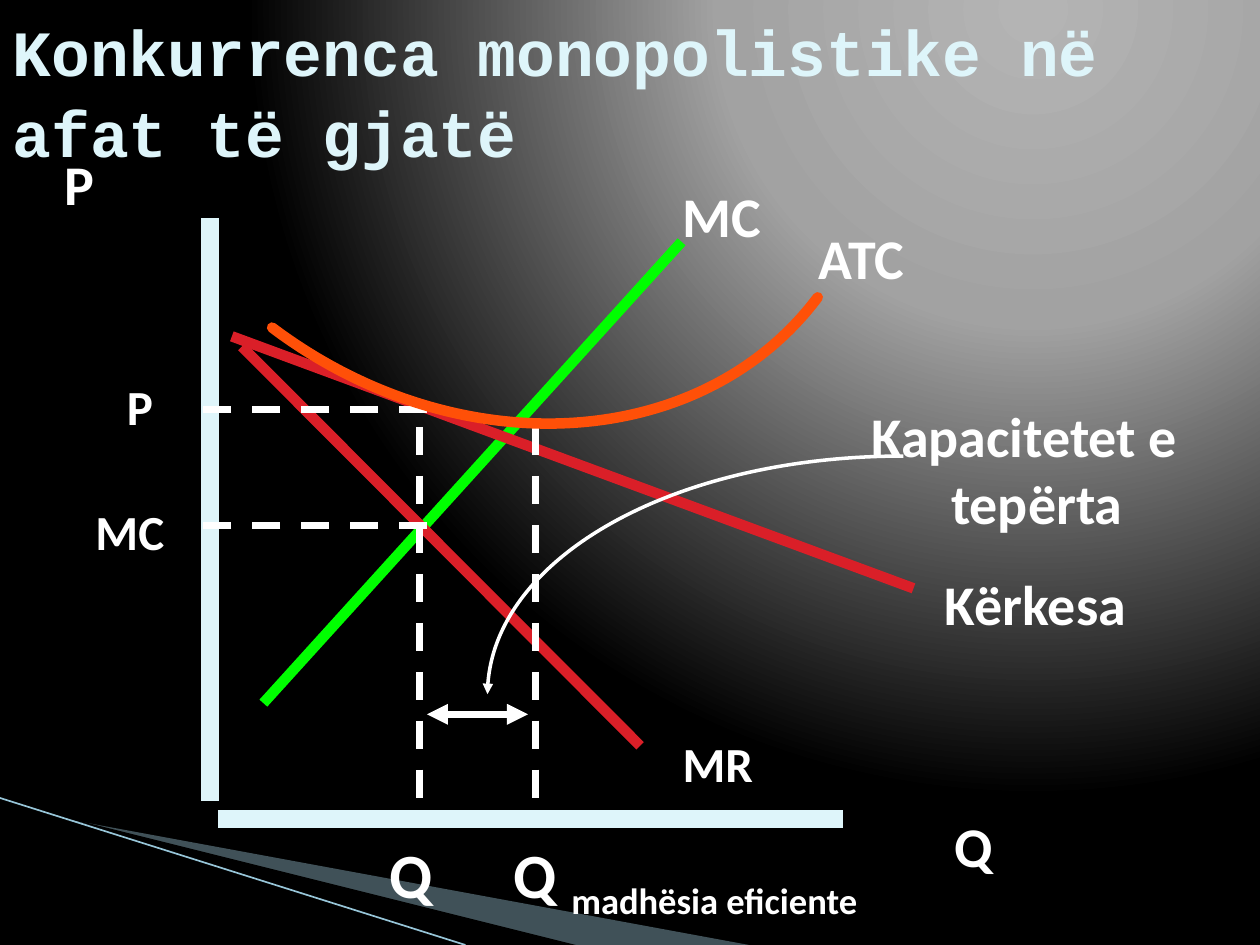
from lxml import etree
from pptx import Presentation
from pptx.dml.color import RGBColor
from pptx.enum.dml import MSO_LINE
from pptx.enum.shapes import MSO_CONNECTOR
from pptx.enum.text import MSO_ANCHOR, MSO_AUTO_SIZE, PP_ALIGN
from pptx.oxml import parse_xml
from pptx.oxml.ns import nsdecls, qn
from pptx.util import Pt

STRAIGHT = MSO_CONNECTOR.STRAIGHT
DASH = MSO_LINE.DASH
MIDDLE = MSO_ANCHOR.MIDDLE
GROW = MSO_AUTO_SIZE.SHAPE_TO_FIT_TEXT
NO_FIT = MSO_AUTO_SIZE.NONE
LEFT, CENTER = PP_ALIGN.LEFT, PP_ALIGN.CENTER
TITLE_ONLY = 5

COLORS = {
    "ice": "DEF5FA", "white": "FFFFFF", "black": "000000", "green": "00FF00",
    "red": "DA1F28", "orange": "FF5008", "wedge": "A0CBDC", "trim": "97C5D8",
}
BACKGROUND_STOPS = [(0, "B4B4B4"), (40, "A2A2A2"), (100, "000000")]


def rgb(name):
    return RGBColor.from_string(COLORS[name])


class Painter:
    """Draws styled elements on the current slide; lengths are in points."""

    label_font = "Calibri"
    title_font = "Courier New"

    def __init__(self, slide):
        self.slide = slide
        self.shapes = slide.shapes

    def background(self, stops):
        stop_xml = "".join(
            f'<a:gs pos="{pos * 1000}"><a:srgbClr val="{color}"/></a:gs>'
            for pos, color in stops)
        common = self.slide.element.cSld
        common.insert(0, parse_xml(
            f'<p:bg {nsdecls("p", "a")}><p:bgPr><a:gradFill rotWithShape="1">'
            f'<a:gsLst>{stop_xml}</a:gsLst><a:path path="circle">'
            '<a:fillToRect l="65000" t="0" r="0" b="98000"/></a:path>'
            '</a:gradFill><a:effectLst/></p:bgPr></p:bg>'))

    def span(self, para, text, size, color, font):
        span = para.add_run()
        span.text = text
        span.font.size = Pt(size)
        span.font.name = font
        span.font.bold = True
        span.font.color.rgb = rgb(color)
        return span

    def title(self, text, left, top, width, height):
        box = self.shapes.title
        box.left, box.top = Pt(left), Pt(top)
        box.width, box.height = Pt(width), Pt(height)
        frame = box.text_frame
        frame.word_wrap = True
        frame.auto_size = NO_FIT
        frame.vertical_anchor = MIDDLE
        para = frame.paragraphs[0]
        para.alignment = LEFT
        para.line_spacing = 1.05
        self.span(para, text, 36.9, "ice", self.title_font)

    def label(self, lines, left, top, width, height, size=32,
              align=LEFT, subscript=None):
        box = self.shapes.add_textbox(Pt(left), Pt(top), Pt(width), Pt(height))
        frame = box.text_frame
        frame.word_wrap = False
        frame.auto_size = GROW
        for index, line in enumerate(lines):
            para = frame.add_paragraph() if index else frame.paragraphs[0]
            para.alignment = align
            self.span(para, line, size, "white", self.label_font)
        if subscript:
            span = self.span(para, subscript, size, "white", self.label_font)
            span.font._element.set("baseline", "-25000")

    def stroke(self, shape, color, weight, heads=()):
        shape.line.color.rgb = rgb(color)
        shape.line.width = Pt(weight)
        outline = shape.line._get_or_add_ln()
        for end in heads:
            etree.SubElement(outline, qn(f"a:{end}"), type="triangle")

    def line(self, start, end, color, weight, dash=None, heads=()):
        line = self.shapes.add_connector(
            STRAIGHT, Pt(start[0]), Pt(start[1]), Pt(end[0]), Pt(end[1]))
        if dash:
            line.line.dash_style = dash
        self.stroke(line, color, weight, heads)
        etree.SubElement(line._element.spPr, qn("a:effectLst"))

    def outline(self, points, close):
        corners = [(Pt(x), Pt(y)) for x, y in points]
        builder = self.shapes.build_freeform(*corners[0])
        builder.add_line_segments(corners[1:], close=close)
        shape = builder.convert_to_shape()
        shape.shadow.inherit = False
        return shape

    def polygon(self, points, color, opacity=100):
        shape = self.outline(points, close=True)
        shape.fill.solid()
        shape.fill.fore_color.rgb = rgb(color)
        shape.line.fill.background()
        if opacity < 100:
            tint = shape._element.spPr.find(".//" + qn("a:srgbClr"))
            etree.SubElement(tint, qn("a:alpha"), val=str(opacity * 1000))

    def curve(self, points, color, weight, heads=(), cap="flat"):
        """One cubic curve: start, two control points, end."""
        shape = self.outline(points, close=False)
        shape.fill.background()
        segments = list(shape._element.spPr.iter(qn("a:lnTo")))
        bezier = etree.SubElement(segments[0].getparent(), qn("a:cubicBezTo"))
        for segment in segments:
            bezier.append(segment[0])
            segment.getparent().remove(segment)
        self.stroke(shape, color, weight, heads)
        shape.line._get_or_add_ln().set("cap", cap)


def main():
    deck = Presentation()
    deck.slide_width, deck.slide_height = Pt(720), Pt(540)
    page = Painter(deck.slides.add_slide(deck.slide_layouts[TITLE_ONLY]))

    # Background and corner decoration
    page.background(BACKGROUND_STOPS)
    page.polygon([(39.6, 468.4), (428, 540), (328, 540)], "wedge", 40)
    page.polygon([(38.2, 467.3), (329, 540), (268, 540)], "black")
    page.line((0, 456), (266, 540), "trim", 0.95)

    page.title("Konkurrenca monopolistike në afat të gjatë", 0, 18, 708, 66)

    # Axes
    page.line((120, 124.5), (120, 458), "ice", 10)
    page.line((124.5, 468), (481.7, 468), "ice", 10)

    # Marginal cost, demand and marginal revenue
    page.line((150.5, 401.8), (389.5, 138.2), "green", 6)
    page.line((132.5, 192.2), (522, 336.2), "red", 6)
    page.line((138.2, 198), (365.8, 426.2), "red", 6)

    # Guides to the price, the marginal cost and both quantities
    for y in (300.2, 234):
        page.line((244, y), (116, y), "white", 4, DASH)
    for x in (239.8, 306):
        page.line((x, 244), (x, 463.7), "white", 4, DASH)

    # Average total cost, and excess capacity
    page.curve([(467.3, 169.9), (400.3, 259.2), (260.6, 266.4),
                (155.5, 187.2)], "orange", 6, cap="rnd")
    page.curve([(278.6, 396.7), (278.6, 321.1), (385.2, 260.6),
                (516.2, 260.6)], "white", 2, ["headEnd"])
    page.line((244, 408.2), (301.7, 408.2), "white", 4,
              heads=["headEnd", "tailEnd"])

    # Labels of axes and curves
    for text, left, top, width in [
            ("Q", 538.5, 460, 39), ("P", 29.5, 82, 35), ("MC", 383, 100, 64),
            ("ATC", 460.8, 124, 80), ("Kërkesa", 532.8, 322, 139)]:
        page.label([text], left, top, width, 45.4)
    for text, left, top, width in [
            ("MC", 47.5, 283, 57.6), ("P", 65.5, 211.7, 33),
            ("MR", 383, 415.4, 57.6)]:
        page.label([text], left, top, width, 40.3, size=28)
    page.label(["Q"], 215.3, 473.8, 42.5, 50.4, size=36)
    page.label(["Q "], 286.6, 473.8, 269.3, 50.4, size=36,
               subscript="madhësia eficiente")
    page.label(["Kapacitetet e ", " tepërta"], 478, 226, 221.8, 83.5,
               align=CENTER)

    deck.save("out.pptx")


if __name__ == "__main__":
    main()
